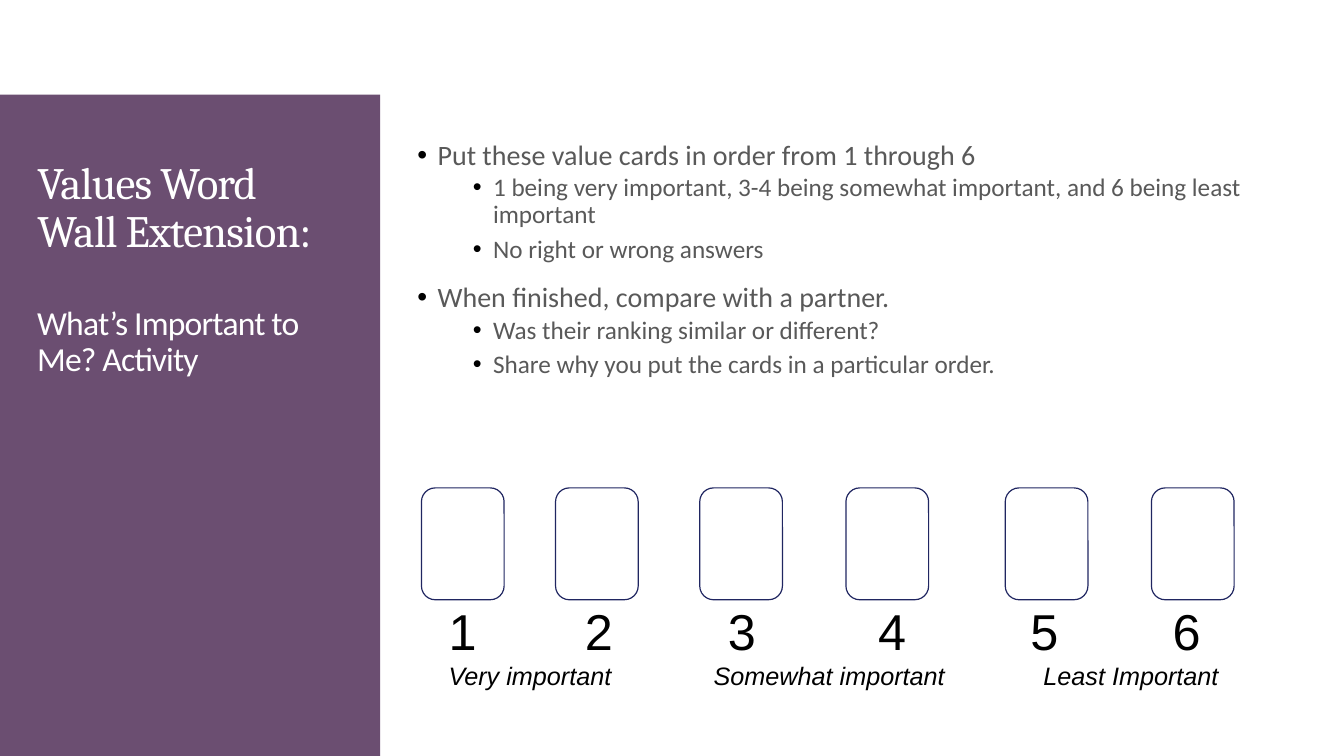
"""Build the slide for the value card ranking activity."""
import dataclasses
import typing

import lxml.etree
import pptx
import pptx.dml.color
import pptx.enum.shapes
import pptx.enum.text
import pptx.oxml.ns
import pptx.util

Inches = pptx.util.Inches
Pt = pptx.util.Pt
qn = pptx.oxml.ns.qn


@dataclasses.dataclass(frozen=True)
class Style:
    font: str
    size: float
    color: str
    spacing: int = 0
    italic: bool = False


@dataclasses.dataclass(frozen=True)
class Bullet:
    text: str
    level: int = 0


@dataclasses.dataclass(frozen=True)
class ScaleRow:
    texts: tuple[str, ...]
    stops: tuple[float, ...]
    align: str
    style: Style


HEADING = Style("Cambria", 32, "FFFFFF", -60)
SUBHEADING = Style("Calibri", 24, "FFFFFF", -60)
BULLET_STYLES = (Style("Calibri", 20, "595959"), Style("Calibri", 18, "595959"))
BULLET_INDENTS = (0.2, 0.75)

INSTRUCTIONS = (
    Bullet("Put these value cards in order from 1 through 6"),
    Bullet("1 being very important, 3-4 being somewhat important, and 6 being least important", 1),
    Bullet("No right or wrong answers", 1),
    Bullet("When finished, compare with a partner."),
    Bullet("Was their ranking similar or different?", 1),
    Bullet("Share why you put the cards in a particular order.", 1),
)
CARD_LEFTS = (4.18, 5.51, 6.94, 8.39, 9.97, 11.42)
SCALE = (
    ScaleRow(("1", "2", "3", "4", "5", "6"), (1.49, 2.91, 4.4, 5.91, 7.32), "ctr",
             Style("Arial", 36, "000000")),
    ScaleRow(("Very important", "Somewhat important", "Least Important"), (2.63, 5.9), "l",
             Style("Arial", 18, "000000", italic=True)),
)


def rgb(color: str) -> pptx.dml.color.RGBColor:
    """Turn a hex string into a colour."""
    return pptx.dml.color.RGBColor.from_string(color)


def place(shape: typing.Any, left: float, top: float, width: float, height: float) -> None:
    """Move and size a shape, with its text wrapped from the top."""
    shape.left, shape.top = Inches(left), Inches(top)
    shape.width, shape.height = Inches(width), Inches(height)
    shape.text_frame.word_wrap = True
    shape.text_frame.auto_size = pptx.enum.text.MSO_AUTO_SIZE.NONE
    shape.text_frame.vertical_anchor = pptx.enum.text.MSO_ANCHOR.TOP


def add_run(paragraph: typing.Any, text: str, style: Style) -> None:
    """Add one styled run."""
    run = paragraph.add_run()
    run.text = text
    run.font.name = style.font
    run.font.size = Pt(style.size)
    run.font.italic = style.italic
    run.font.color.rgb = rgb(style.color)
    if style.spacing:
        run.font._element.set("spc", str(style.spacing))


def write_heading(frame: typing.Any, text: str, style: Style) -> None:
    """Write a left-aligned heading with tight lines."""
    heading = frame.paragraphs[0]
    heading.alignment = pptx.enum.text.PP_ALIGN.LEFT
    heading.line_spacing = 0.9
    add_run(heading, text, style)


def nth_paragraph(frame: typing.Any, index: int) -> typing.Any:
    """Give the first paragraph, or add the next one."""
    return frame.add_paragraph() if index else frame.paragraphs[0]


def write_bullet(paragraph: typing.Any, bullet: Bullet, first: bool) -> None:
    """Write one bulleted instruction."""
    properties = paragraph._p.get_or_add_pPr()
    properties.set("marL", str(Inches(BULLET_INDENTS[bullet.level])))
    properties.set("indent", str(Inches(-0.2)))
    bullet_color = lxml.etree.SubElement(properties, qn("a:buClr"))
    lxml.etree.SubElement(bullet_color, qn("a:srgbClr"), val="000000")
    lxml.etree.SubElement(properties, qn("a:buFont"), typeface="Arial")
    lxml.etree.SubElement(properties, qn("a:buChar"), char="•")
    paragraph.level = bullet.level
    paragraph.line_spacing = 0.9
    before = 2.5 if bullet.level else 12
    paragraph.space_before = Pt(0 if first else before)
    paragraph.space_after = Pt(2.5 if bullet.level else 0)
    add_run(paragraph, bullet.text, BULLET_STYLES[bullet.level])


def write_scale_row(paragraph: typing.Any, row: ScaleRow) -> None:
    """Write a row of the scale, spread over tab stops."""
    tabs = lxml.etree.SubElement(paragraph._p.get_or_add_pPr(), qn("a:tabLst"))
    for stop in row.stops:
        lxml.etree.SubElement(tabs, qn("a:tab"), pos=str(Inches(stop)), algn=row.align)
    add_run(paragraph, "\t".join(row.texts), row.style)


def add_block(slide: typing.Any, kind: typing.Any, left: float, top: float,
              width: float, height: float) -> typing.Any:
    """Add a preset shape without shadow."""
    block = slide.shapes.add_shape(kind, Inches(left), Inches(top), Inches(width), Inches(height))
    block.shadow.inherit = False
    return block


def add_text_area(slide: typing.Any, left: float, top: float,
                  width: float, height: float) -> typing.Any:
    """Add a wrapped text box and give its text frame."""
    area = slide.shapes.add_textbox(0, 0, 0, 0)
    place(area, left, top, width, height)
    return area.text_frame


def main() -> None:
    """Build and save the slide."""
    deck = pptx.Presentation()
    deck.slide_width, deck.slide_height = Inches(13.33), Inches(7.5)
    slide = deck.slides.add_slide(deck.slide_layouts[1])
    kinds = pptx.enum.shapes.MSO_SHAPE

    side_panel = add_block(slide, kinds.RECTANGLE, 0, 0.94, 3.77, 6.56)
    side_panel.fill.solid()
    side_panel.fill.fore_color.rgb = rgb("6B4E71")
    side_panel.line.fill.background()
    slide.shapes._spTree.insert(2, side_panel._element)

    heading = slide.shapes.title
    place(heading, 0.27, 1.54, 3.22, 1.4)
    write_heading(heading.text_frame, "Values Word Wall Extension:", HEADING)
    subheading = add_text_area(slide, 0.27, 2.99, 3.22, 2.48)
    write_heading(subheading, "What’s Important to Me? Activity", SUBHEADING)

    instructions = slide.placeholders[1]
    place(instructions, 4.04, 1.35, 8.73, 3.4)
    for index, bullet in enumerate(INSTRUCTIONS):
        write_bullet(nth_paragraph(instructions.text_frame, index), bullet, index == 0)

    for left in CARD_LEFTS:
        card = add_block(slide, kinds.ROUNDED_RECTANGLE, left, 4.84, 0.82, 1.11)
        card.fill.background()
        card.line.color.rgb = rgb("202661")
        card.line.width = Pt(0.85)

    scale = add_text_area(slide, 4.35, 5.9, 7.92, 1.01)
    for index, row in enumerate(SCALE):
        write_scale_row(nth_paragraph(scale, index), row)

    deck.save("out.pptx")


if __name__ == "__main__":
    main()
